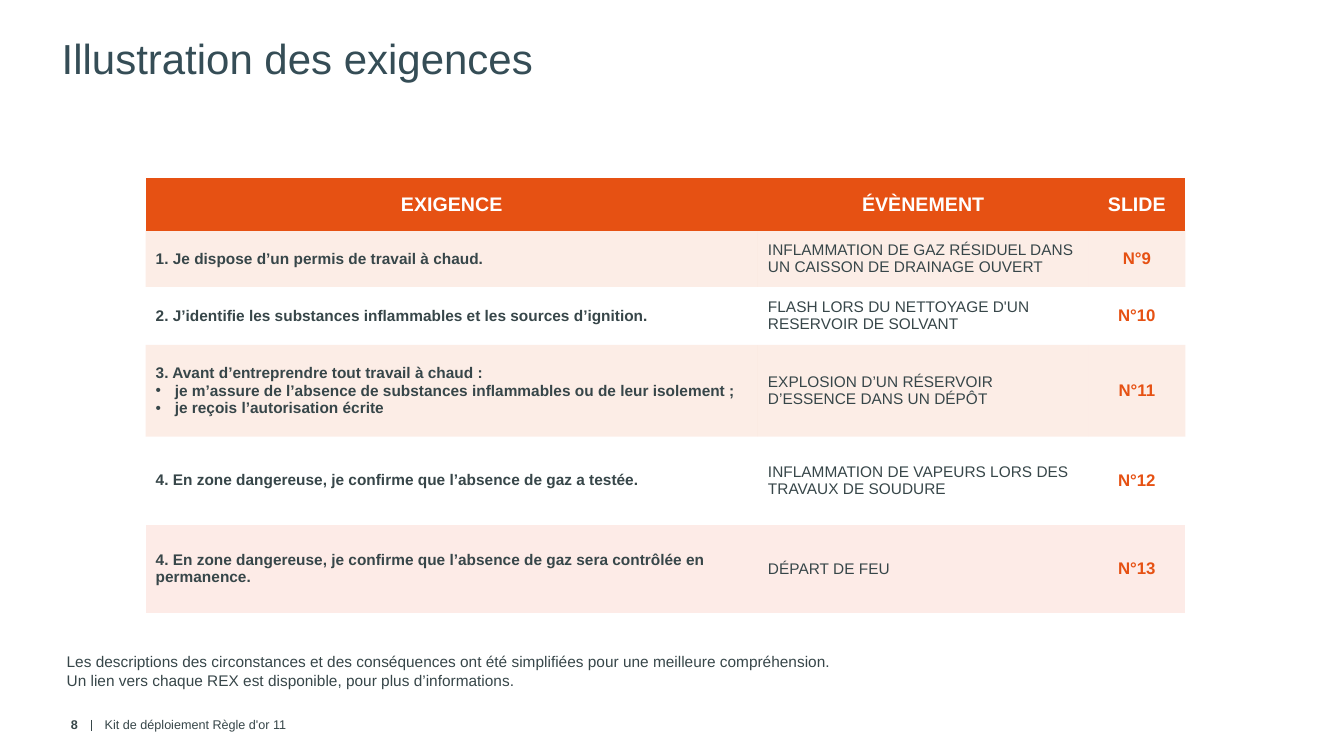
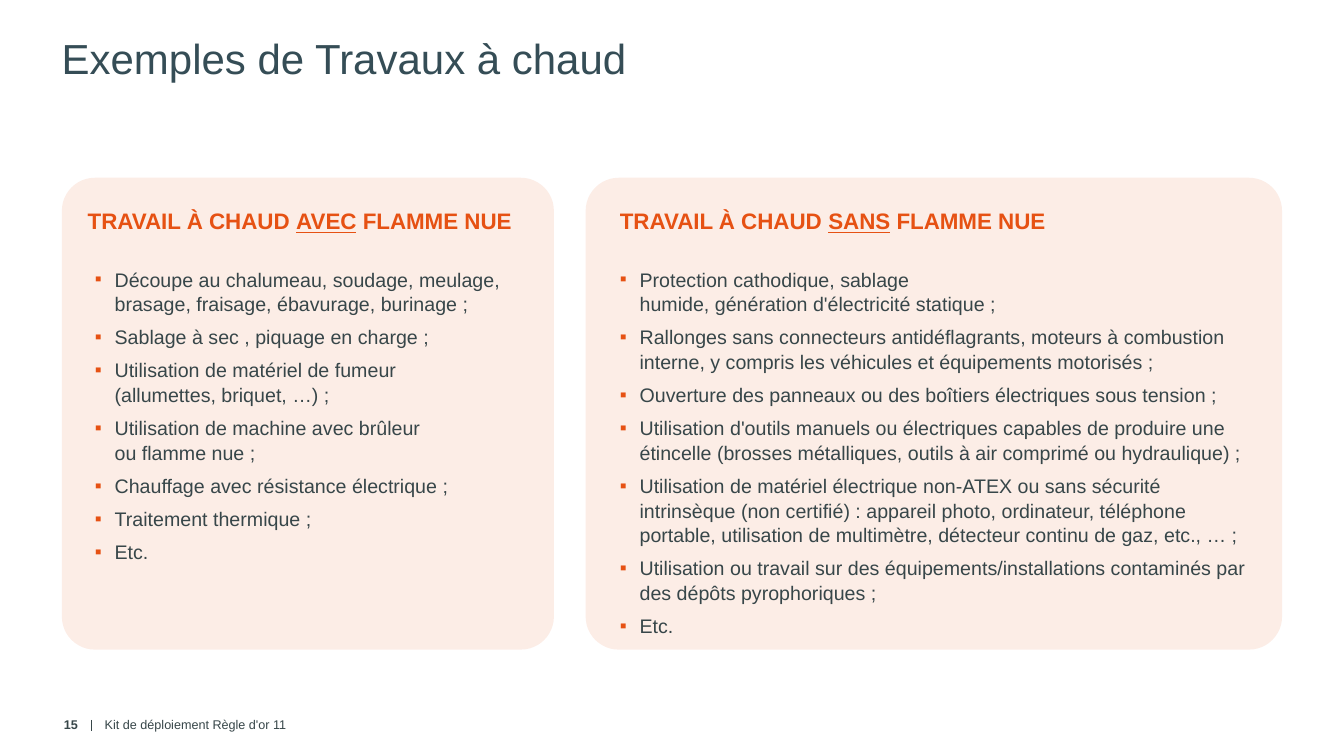
from lxml import etree
from pptx import Presentation
from pptx.dml.color import RGBColor
from pptx.enum import shapes as sh, text as tx
from pptx.oxml.ns import qn
from pptx.util import Cm, Pt

hue = RGBColor.from_string
ORANGE, INK, SLATE, WHITE, ROSE = "E65113", "374649", "354D56", "FFFFFF", "FDEBE7"
FONT = "Arial"


def style(frame, size, colour, bold=False, flush=False):
    """Format every run; flush text wraps in a box without insets."""
    if flush:
        frame.word_wrap = True
        frame.margin_left = frame.margin_right = 0
        frame.margin_top = frame.margin_bottom = 0
    for par in frame.paragraphs:
        for run in par.runs:
            run.font.name, run.font.size, run.font.bold = FONT, Pt(size), bold
            run.font.color.rgb = hue(colour)


def bullet(par, mark, indent, colour):
    props = par._p.get_or_add_pPr()
    props.set("marL", str(indent))
    props.set("indent", str(-indent))
    tone = etree.SubElement(props, qn("a:buClr"))
    etree.SubElement(tone, qn("a:srgbClr"), val=colour)
    etree.SubElement(props, qn("a:buFont"), typeface=FONT)
    etree.SubElement(props, qn("a:buChar"), char=mark)


prs = Presentation()
prs.slide_width, prs.slide_height = Cm(33.87), Cm(19.05)

# Shared title and footer
slides = []
for name, page in [("Illustration des exigences", "8"),
                   ("Exemples de Travaux à chaud", "15")]:
    slide = prs.slides.add_slide(prs.slide_layouts[5])
    slides.append(slide)
    title = slide.shapes.title
    title.left, title.top, title.width, title.height = Cm(1.3), Cm(0.69), Cm(27), Cm(2.79)
    frame = title.text_frame
    frame.text = name
    frame.auto_size = tx.MSO_AUTO_SIZE.NONE
    frame.vertical_anchor = tx.MSO_ANCHOR.TOP
    frame.paragraphs[0].alignment = tx.PP_ALIGN.LEFT
    style(frame, 30, SLATE)

    rule = slide.shapes.add_connector(
        sh.MSO_CONNECTOR.STRAIGHT, Cm(2.3), Cm(18.14), Cm(2.3), Cm(18.42))
    rule.line.color.rgb, rule.line.width = hue(INK), Pt(1)
    etree.SubElement(rule._element.spPr, qn("a:effectLst"))

    for left, width, words, align, bold in [
            (2.39, 10, "Kit de déploiement Règle d'or 11", tx.PP_ALIGN.LEFT, False),
            (0.61, 1.6, page, tx.PP_ALIGN.RIGHT, True)]:
        frame = slide.shapes.add_textbox(Cm(left), Cm(17.91), Cm(width), Cm(0.71)).text_frame
        frame.text = words
        frame.word_wrap = True
        frame.vertical_anchor = tx.MSO_ANCHOR.MIDDLE
        frame.paragraphs[0].alignment = align
        style(frame, 9, INK, bold)

first, second = slides
pale = []  # properties of the parts whose fill is see-through

# Table of requirements
rows = [
    (1.32, ORANGE, "EXIGENCE", "ÉVÈNEMENT", "SLIDE"),
    (1.42, None, "1. Je dispose d’un permis de travail à chaud.",
     "INFLAMMATION DE GAZ RÉSIDUEL DANS UN CAISSON DE DRAINAGE OUVERT", "N°9"),
    (1.46, WHITE, "2. J’identifie les substances inflammables et les sources d’ignition.",
     "FLASH LORS DU NETTOYAGE D'UN RESERVOIR DE SOLVANT", "N°10"),
    (2.31, None, "3. Avant d’entreprendre tout travail à chaud :\n"
     "je m’assure de l’absence de substances inflammables ou de leur isolement ;\n"
     "je reçois l’autorisation écrite",
     "EXPLOSION D’UN RÉSERVOIR D’ESSENCE DANS UN DÉPÔT", "N°11"),
    (2.22, WHITE, "4. En zone dangereuse, je confirme que l’absence de gaz a testée.",
     "INFLAMMATION DE VAPEURS LORS DES TRAVAUX DE SOUDURE", "N°12"),
    (2.22, ROSE, "4. En zone dangereuse, je confirme que l’absence de gaz sera "
     "contrôlée en permanence.", "DÉPART DE FEU", "N°13"),
]
looks = [(11, INK, True), (11, INK, False), (12, ORANGE, True)]
grid = first.shapes.add_table(len(rows), 3, Cm(3.67), Cm(4.49), Cm(26.2), Cm(10.95)).table
grid.horz_banding = False
plain = "{2D5ABB26-0587-4C30-8999-92F81FD0307C}"
grid._tbl.tblPr.find(qn("a:tableStyleId")).text = plain
for col, width in zip(grid.columns, (15.43, 8.33, 2.44)):
    col.width = Cm(width)
for r, (height, fill, *words) in enumerate(rows):
    grid.rows[r].height = Cm(height)
    for c, entry in enumerate(words):
        cell = grid.cell(r, c)
        cell.vertical_anchor = tx.MSO_ANCHOR.MIDDLE
        cell.fill.solid()
        cell.fill.fore_color.rgb = hue(fill or ORANGE)
        if not fill:
            pale.append(cell._tc.get_or_add_tcPr())
        frame = cell.text_frame
        frame.text = entry
        for par in frame.paragraphs[1:]:
            bullet(par, "•", Cm(0.48), INK)
        if r == 0 or c == 2:
            frame.paragraphs[0].alignment = tx.PP_ALIGN.CENTER
        style(frame, *(looks[c] if r else (14, WHITE, True)))

note = first.shapes.add_textbox(Cm(1.68), Cm(16.41), Cm(27), Cm(0.94)).text_frame
note.text = ("Les descriptions des circonstances et des conséquences ont été simplifiées "
             "pour une meilleure compréhension.\v"
             "Un lien vers chaque REX est disponible, pour plus d’informations.")
note.paragraphs[0].line_spacing = 1.05
style(note, 11, INK, flush=True)

# Cards: left and width of the card, left of its heading, left and width of its list
cards = [
    (1.56, 12.4, 2.21, 2.39, 10.77, "AVEC", [
        "Découpe au chalumeau, soudage, meulage, brasage, fraisage, ébavurage, burinage ;",
        "Sablage à sec , piquage en charge ;",
        "Utilisation de matériel de fumeur\v(allumettes, briquet, …) ;",
        "Utilisation de machine avec brûleur\vou flamme nue ;",
        "Chauffage avec résistance électrique ;",
        "Traitement thermique ;",
        "Etc."]),
    (14.76, 17.55, 15.62, 15.62, 15.85, "SANS", [
        "Protection cathodique, sablage\vhumide, génération d'électricité statique ;",
        "Rallonges sans connecteurs antidéflagrants, moteurs à combustion interne, "
        "y compris les véhicules et équipements motorisés ;",
        "Ouverture des panneaux ou des boîtiers électriques sous tension ;",
        "Utilisation d'outils manuels ou électriques capables de produire une étincelle "
        "(brosses métalliques, outils à air comprimé ou hydraulique) ;",
        "Utilisation de matériel électrique non-ATEX ou sans sécurité intrinsèque "
        "(non certifié) : appareil photo, ordinateur, téléphone portable, utilisation de "
        "multimètre, détecteur continu de gaz, etc., … ;",
        "Utilisation ou travail sur des équipements/installations contaminés par des "
        "dépôts pyrophoriques ;",
        "Etc."]),
]
for left, width, start, edge, span, key, items in cards:
    card = second.shapes.add_shape(
        sh.MSO_SHAPE.ROUNDED_RECTANGLE, Cm(left), Cm(4.48), Cm(width), Cm(11.89))
    card.adjustments[0] = 0.07
    card.shadow.inherit = False
    card.fill.solid()
    card.fill.fore_color.rgb = hue(ORANGE)
    card.line.fill.background()
    pale.append(card._element.spPr)

    head = second.shapes.add_textbox(Cm(start), Cm(5.23), Cm(11.4), Cm(0.69)).text_frame
    for words in ("TRAVAIL À CHAUD ", key, " FLAMME NUE"):
        run = head.paragraphs[0].add_run()
        run.text = words
        run.font.underline = words == key
    style(head, 16, ORANGE, True, flush=True)

    body = second.shapes.add_textbox(Cm(edge), Cm(6.71), Cm(span), Cm(8.9)).text_frame
    body.text = "\n".join(items)
    for par in body.paragraphs:
        bullet(par, "▪", Cm(0.5), ORANGE)
        par.space_after = Pt(6)
        par.line_spacing = 1.05
    style(body, 14, INK, flush=True)

for props in pale:
    tone = props.find(".//" + qn("a:srgbClr"))
    etree.SubElement(tone, qn("a:alpha"), val="10000")

prs.save("out.pptx")
